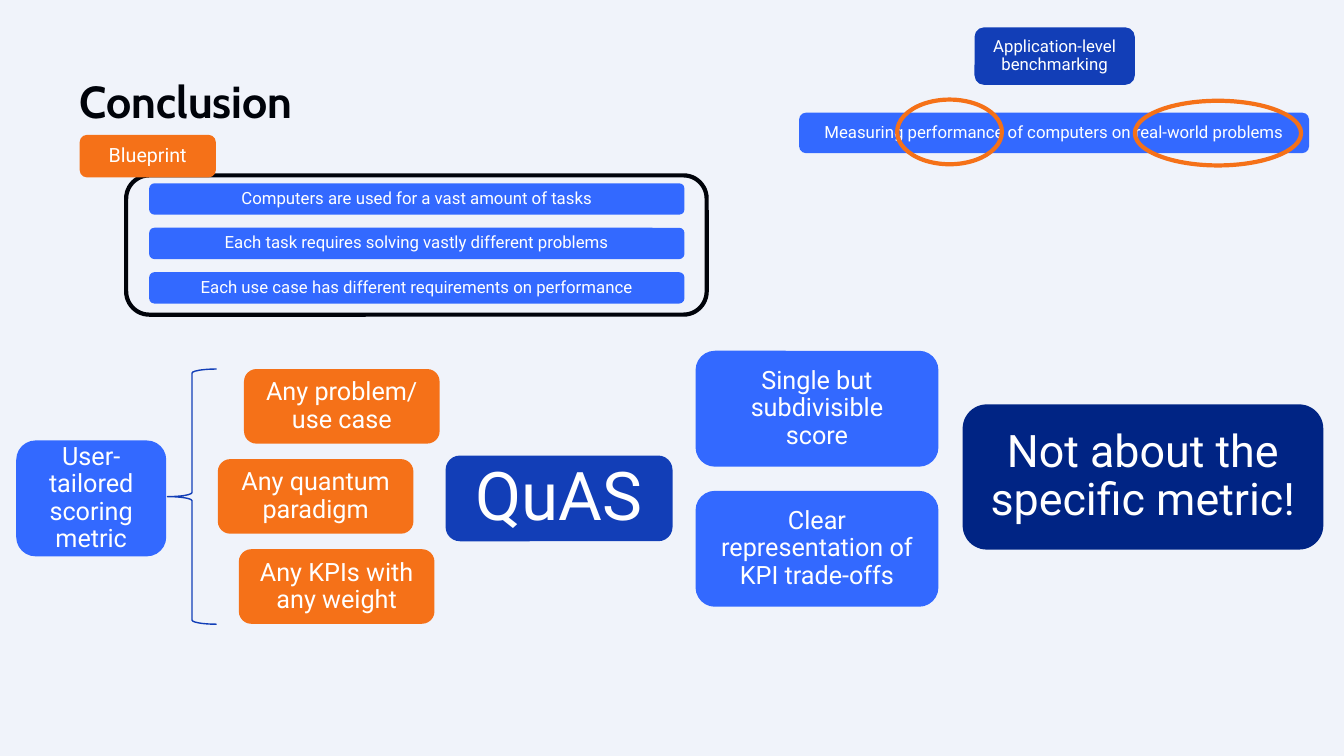
from pptx import Presentation
from pptx.dml.color import RGBColor
from pptx.enum import shapes, text
from pptx.util import Cm, Pt

ORANGE, BLUE, MID_BLUE, NAVY = "F57118", "3369FF", "123EB7", "002484"
BLACK, WHITE, PALE = "00030A", "FFFFFF", "F0F3FA"
KIND = shapes.MSO_SHAPE


def colour(value):
    return RGBColor.from_string(value)


def lengths(place):
    return [Cm(value) for value in place]


def format_para(para, font, size, hue, bold=False):
    para.line_spacing = 0.9
    para.font.name = font
    para.font.size = Pt(size)
    para.font.bold = bold
    para.font.color.rgb = colour(hue)


def add_title(page, words):
    title = page.shapes.title
    title.left, title.top, title.width, title.height = lengths((2.01, 2.01, 29.87, 1.02))
    frame = title.text_frame
    frame.text = words
    frame.auto_size = text.MSO_AUTO_SIZE.NONE
    frame.vertical_anchor = text.MSO_ANCHOR.TOP
    frame.margin_left = frame.margin_top = frame.margin_right = frame.margin_bottom = 0
    para = frame.paragraphs[0]
    para.alignment = text.PP_ALIGN.LEFT
    format_para(para, "Cabin", 32, BLACK, bold=True)


def add_card(parent, words, place, fill, size):
    card = parent.shapes.add_shape(KIND.ROUNDED_RECTANGLE, *lengths(place))
    card.shadow.inherit = False
    card.fill.solid()
    card.fill.fore_color.rgb = colour(fill)
    card.line.fill.background()
    frame = card.text_frame
    frame.text = words
    frame.word_wrap = True
    frame.vertical_anchor = text.MSO_ANCHOR.MIDDLE
    frame.margin_left = frame.margin_top = frame.margin_right = frame.margin_bottom = Cm(0.4)
    para = frame.paragraphs[0]
    para.alignment = text.PP_ALIGN.CENTER
    para.space_after = Pt(2)
    format_para(para, "Roboto", size, WHITE)


def add_outline(parent, kind, place, hue, width):
    outline = parent.shapes.add_shape(kind, *lengths(place))
    outline.shadow.inherit = False
    outline.fill.background()
    outline.line.color.rgb = colour(hue)
    outline.line.width = Pt(width)


def add_definition(page):
    group = page.shapes.add_group_shape()
    add_card(group, "Application-level benchmarking", (24.56, 0.69, 4.04, 1.45), MID_BLUE, 12)
    add_card(group, "Measuring performance of computers on real-world problems",
             (20.14, 2.84, 12.85, 1.02), BLUE, 12)
    for place in ((22.61, 2.51, 2.64, 1.63), (28.6, 2.54, 4.19, 1.63)):
        add_outline(group, KIND.OVAL, place, ORANGE, 3)


def add_blueprint(page):
    group = page.shapes.add_group_shape()
    statements = (
        "Computers are used for a vast amount of tasks",
        "Each task requires solving vastly different problems",
        "Each use case has different requirements on performance",
    )
    for row, words in enumerate(statements):
        add_card(group, words, (3.76, 4.62 + 1.12 * row, 13.49, 0.79), BLUE, 12)
    add_outline(group, KIND.ROUNDED_RECTANGLE, (3.18, 4.42, 14.63, 3.51), BLACK, 3)
    add_card(group, "Blueprint", (2.01, 3.4, 3.43, 1.07), ORANGE, 14)


def add_metric(page):
    add_card(page, "QuAS", (11.23, 11.48, 5.72, 2.16), MID_BLUE, 48)
    add_card(page, "User-tailored scoring metric", (0.41, 11.1, 3.78, 2.92), BLUE, 18)
    freedoms = (
        ("Any problem/ use case", 6.15),
        ("Any quantum paradigm", 5.49),
        ("Any KPIs with any weight", 6.02),
    )
    for row, (words, left) in enumerate(freedoms):
        add_card(page, words, (left, 9.3 + 2.27 * row, 4.93, 1.88), ORANGE, 18)
    benefits = ("Single but subdivisible score", "Clear representation of KPI trade-offs")
    for row, words in enumerate(benefits):
        add_card(page, words, (17.53, 8.84 + 3.53 * row, 6.12, 2.92), BLUE, 18)
    add_outline(page, KIND.LEFT_BRACE, (4.22, 9.3, 1.24, 6.43), MID_BLUE, 1)
    add_card(page, "Not about the specific metric!", (24.26, 10.19, 9.09, 3.66), NAVY, 32)


def main():
    deck = Presentation()
    deck.slide_width, deck.slide_height = Cm(33.87), Cm(19.05)
    page = deck.slides.add_slide(deck.slide_layouts[5])
    page.background.fill.solid()
    page.background.fill.fore_color.rgb = colour(PALE)
    add_title(page, "Conclusion")
    add_definition(page)
    add_blueprint(page)
    add_metric(page)
    deck.save("out.pptx")


if __name__ == "__main__":
    main()
